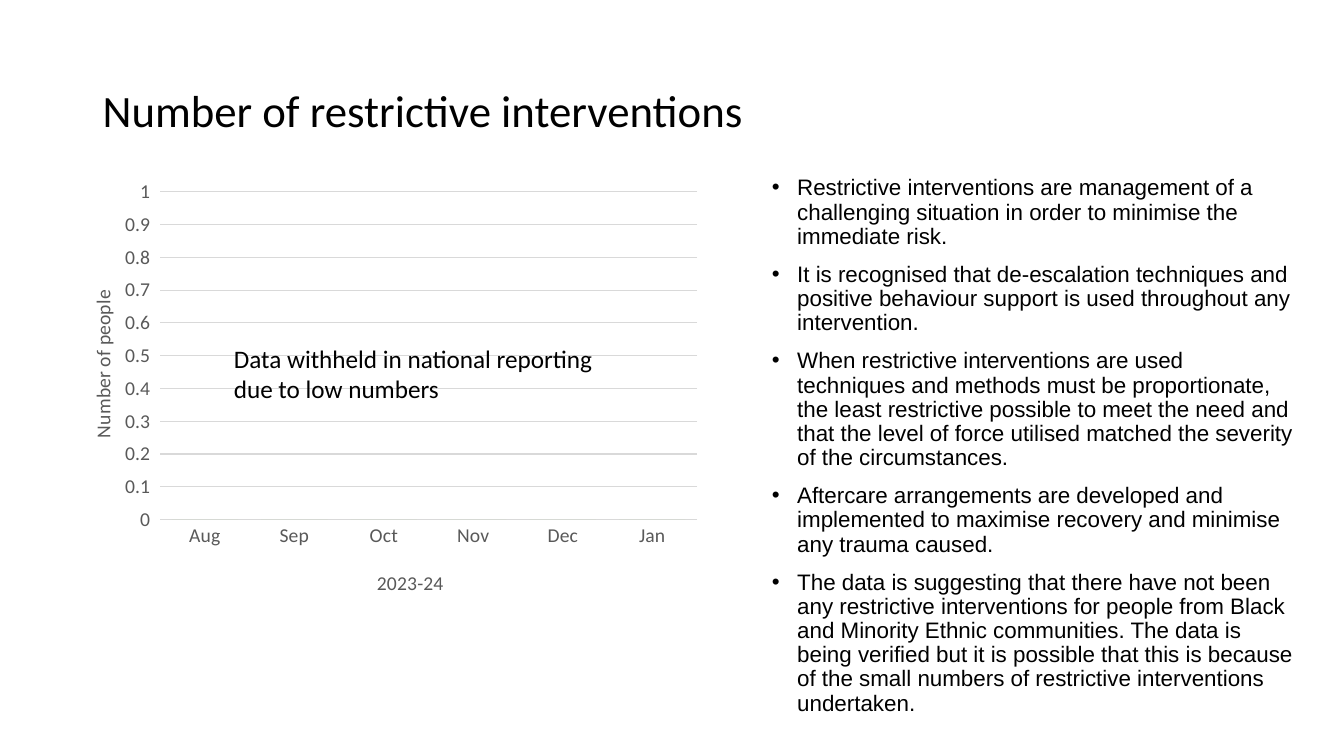
from dataclasses import dataclass
from lxml.etree import SubElement
from pptx import Presentation
from pptx.chart.data import CategoryChartData
from pptx.dml.color import RGBColor
from pptx.enum.chart import XL_CHART_TYPE, XL_TICK_MARK
from pptx.enum.text import MSO_ANCHOR
from pptx.oxml import parse_xml
from pptx.oxml.ns import nsdecls, qn
from pptx.util import Inches, Pt


@dataclass(frozen=True)
class Theme:
    ink: RGBColor = RGBColor(0, 0, 0)
    grey: RGBColor = RGBColor(0x59, 0x59, 0x59)
    rule: RGBColor = RGBColor(0xD9, 0xD9, 0xD9)
    bar: RGBColor = RGBColor(0xC5, 0xE0, 0xB4)
    head: str = "Calibri"
    body: str = "Arial"
    title: int = 32
    note: int = 18
    text: int = 16
    axis: int = 14


THEME = Theme()
WIDTH, HEIGHT = 13.33, 7.5
TITLE = "Number of restrictive interventions"
NOTE = "Data withheld in national reporting due to low numbers"
MONTHS = ["Aug", "Sep", "Oct", "Nov", "Dec", "Jan"]
POINTS = [
    "Restrictive interventions are management of a challenging situation in order to minimise the immediate risk.",
    "It is recognised that de-escalation techniques and positive behaviour support is used throughout any intervention.",
    "When restrictive interventions are used techniques and methods must be proportionate, the least restrictive "
    "possible to meet the need and that the level of force utilised matched the severity of the circumstances.",
    "Aftercare arrangements are developed and implemented to maximise recovery and minimise any trauma caused.",
    "The data is suggesting that there have not been any restrictive interventions for people from Black and "
    "Minority Ethnic communities. The data is being verified but it is possible that this is because of the "
    "small numbers of restrictive interventions undertaken.",
]


def share(box, x, y, w, h):
    left, top, width, height = box
    return left + x * width, top + y * height, w * width, h * height


def style(font, name, size, color):
    font.name, font.size, font.bold = name, Pt(size), False
    font.color.rgb = color


def add_text(slide, box, lines, name, size):
    frame = slide.shapes.add_textbox(*map(Inches, box)).text_frame
    frame.word_wrap = True
    frame.text = "\n".join(lines)
    for par in frame.paragraphs:
        style(par.runs[0].font, name, size, THEME.ink)
    return frame


def add_title(slide, box):
    frame = add_text(slide, box, [TITLE], THEME.head, THEME.title)
    frame.vertical_anchor = MSO_ANCHOR.MIDDLE
    frame.paragraphs[0].line_spacing = 0.9


def add_points(slide, box):
    frame = add_text(slide, box, POINTS, THEME.body, THEME.text)
    for par in frame.paragraphs:
        par.line_spacing = 0.9
        par.space_before = Pt(10)
        props = par._p.get_or_add_pPr()
        props.set("marL", str(Inches(0.25)))
        props.set("indent", str(-Inches(0.25)))
        SubElement(props, qn("a:buFont"), typeface=THEME.body)
        SubElement(props, qn("a:buChar"), char="•")


def set_place(node, index, inner=False, **spots):
    for old in node.findall(qn("c:layout")):
        node.remove(old)
    target = '<c:layoutTarget val="inner"/>' if inner else ""
    modes = "".join(f'<c:{key}Mode val="edge"/>' for key in "xy")
    sizes = "".join(f'<c:{key} val="{val}"/>' for key, val in spots.items())
    node.insert(index, parse_xml(
        f'<c:layout {nsdecls("c")}><c:manualLayout>{target}{modes}{sizes}</c:manualLayout></c:layout>'))


def set_axis(axis, label, x, y, turn):
    style(axis.tick_labels.font, THEME.head, THEME.axis, THEME.grey)
    title = axis.axis_title
    title.text_frame.text = label
    style(title.text_frame.paragraphs[0].runs[0].font, THEME.head, THEME.axis, THEME.grey)
    title._element.find(".//" + qn("a:bodyPr")).set("rot", str(turn * 60000))
    set_place(title._element, 1, x=x, y=y)


def set_line(line):
    line.color.rgb = THEME.rule
    line.width = Pt(0.75)


def add_graph(slide, box):
    data = CategoryChartData()
    data.categories = MONTHS
    data.add_series("Series 1", [0] * len(MONTHS))
    chart = slide.shapes.add_chart(XL_CHART_TYPE.COLUMN_CLUSTERED, *map(Inches, box), data).chart
    chart.has_title = chart.has_legend = False
    style(chart.font, THEME.head, THEME.axis, THEME.ink)
    plot = chart.plots[0]
    plot.gap_width, plot.vary_by_categories = 35, False
    fill = plot.series[0].format.fill
    fill.solid()
    fill.fore_color.rgb = THEME.bar
    months, people = chart.category_axis, chart.value_axis
    set_axis(months, "2023-24", 0.39, 0.72, 0)
    set_axis(people, "Number of people", 0.02, 0.21, -90)
    months.major_tick_mark = XL_TICK_MARK.NONE
    set_line(months.format.line)
    people.minimum_scale, people.maximum_scale, people.major_unit = 0, 1, 0.1
    people.major_tick_mark = XL_TICK_MARK.OUTSIDE
    people.format.line.fill.background()
    set_line(people.major_gridlines.format.line)
    area = chart._chartSpace.find(".//" + qn("c:plotArea"))
    set_place(area, 0, inner=True, x=0.116, y=0.037, w=0.69, h=0.599)
    add_text(slide, share(box, 0.198, 0.304, 0.495, 0.13), [NOTE], THEME.head, THEME.note)


def main():
    deck = Presentation()
    deck.slide_width, deck.slide_height = Inches(WIDTH), Inches(HEIGHT)
    slide = deck.slides.add_slide(deck.slide_layouts[6])
    page = (0, 0, WIDTH, HEIGHT)
    add_title(slide, share(page, 0.069, 0.053, 0.863, 0.193))
    add_points(slide, share(page, 0.567, 0.227, 0.404, 0.635))
    add_graph(slide, share(page, 0.052, 0.227, 0.579, 0.724))
    deck.save("out.pptx")


if __name__ == "__main__":
    main()
